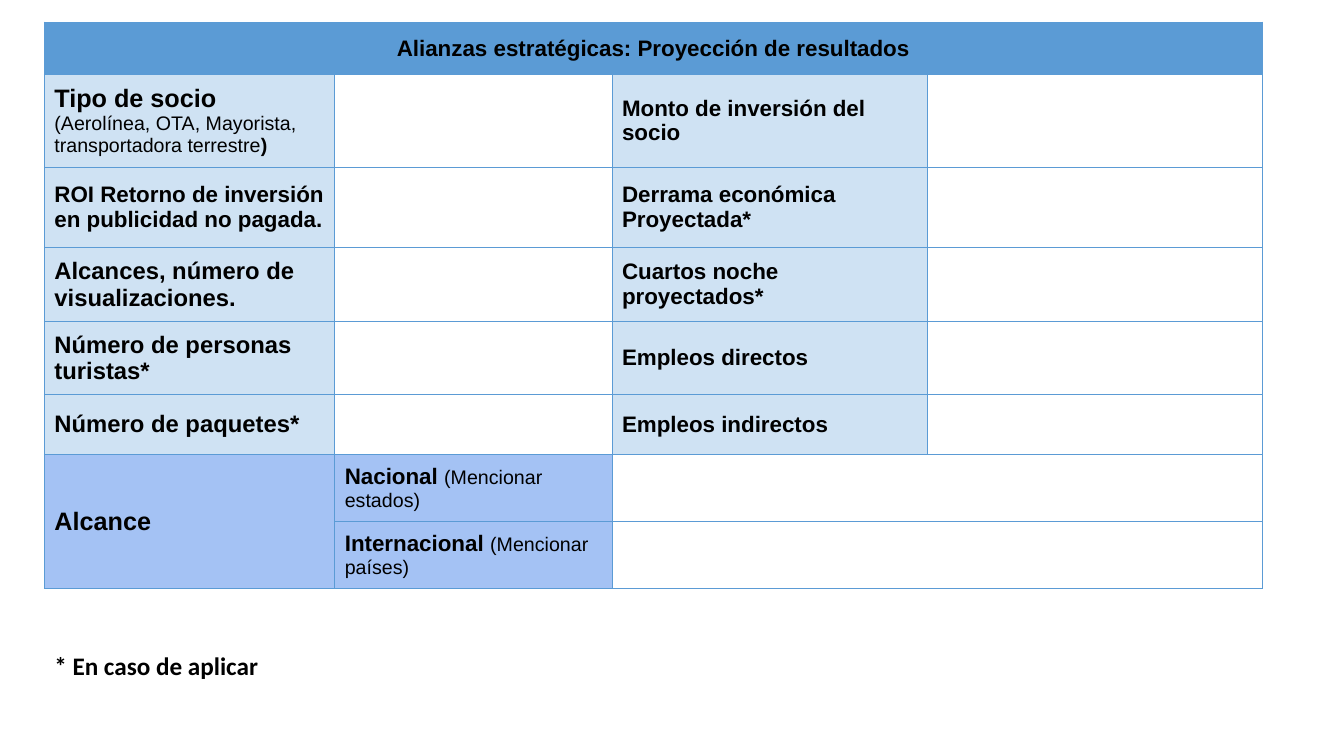
from dataclasses import dataclass

from lxml import etree
from pptx import Presentation
from pptx.dml.color import RGBColor
from pptx.enum.text import MSO_ANCHOR, PP_ALIGN
from pptx.oxml.ns import qn
from pptx.util import Inches, Pt

MIDDLE = MSO_ANCHOR.MIDDLE
CENTER, LEFT = PP_ALIGN.CENTER, PP_ALIGN.LEFT
HEADER, LABEL, SCOPE, BLACK = "5B9BD5", "CFE2F3", "A4C2F4", "000000"
WIDTH, HEIGHT = Inches(13.33), Inches(7.5)
COLUMNS = [21.61, 20.63, 23.48, 24.91]
ROWS = [6.93, 11.6, 10.67, 8.27, 8.53, 7.87, 8.53, 8]


@dataclass
class Part:
    """A stretch of text in one size and weight."""
    text: str
    size: float = 16
    bold: bool = True


@dataclass
class Entry:
    """A filled table cell with its paragraphs and its span."""
    row: int
    col: int
    lines: list[list[Part]]
    fill: str = LABEL
    rows: int = 1
    cols: int = 1
    align: PP_ALIGN = LEFT


ENTRIES = [
    Entry(0, 0, [[Part("Alianzas estratégicas: Proyección de resultados")]],
          HEADER, cols=4, align=CENTER),
    Entry(1, 0, [[Part("Tipo de socio", 18)],
                 [Part("(Aerolínea, OTA, Mayorista, transportadora terrestre", 14, False),
                  Part(")", 14)]]),
    Entry(1, 2, [[Part("Monto de inversión del socio")]]),
    Entry(2, 0, [[Part("ROI Retorno de inversión en publicidad no pagada.")]]),
    Entry(2, 2, [[Part("Derrama económica")], [Part("Proyectada*")]]),
    Entry(3, 0, [[Part("Alcances, número de visualizaciones.", 17)]]),
    Entry(3, 2, [[Part("Cuartos noche")], [Part("proyectados*")]]),
    Entry(4, 0, [[Part("Número de personas turistas*", 17)]]),
    Entry(4, 2, [[Part("Empleos directos")]]),
    Entry(5, 0, [[Part("Número de paquetes*", 17)]]),
    Entry(5, 2, [[Part("Empleos indirectos")]]),
    Entry(6, 0, [[Part("Alcance", 18)]], SCOPE, rows=2),
    Entry(6, 1, [[Part("Nacional "), Part("(Mencionar estados)", 14, False)]], SCOPE),
    Entry(7, 1, [[Part("Internacional "), Part("(Mencionar países)", 14, False)]], SCOPE),
]


def across(percent: float) -> int:
    """Turn a percentage of the slide's width into a length."""
    return round(WIDTH * percent / 100)


def down(percent: float) -> int:
    """Turn a percentage of the slide's height into a length."""
    return round(HEIGHT * percent / 100)


def colour(value: str) -> RGBColor:
    """Turn a hex string into a colour."""
    return RGBColor.from_string(value)


def write(p, parts: list[Part], font: str) -> None:
    """Add formatted runs to a paragraph."""
    for part in parts:
        r = p.add_run()
        r.text = part.text
        r.font.name = font
        r.font.size = Pt(part.size)
        r.font.bold = part.bold
        r.font.color.rgb = colour(BLACK)


def outline(cell) -> None:
    """Draw thin blue lines on the four sides of a cell."""
    tc_pr = cell._tc.get_or_add_tcPr()
    for side in ("a:lnL", "a:lnR", "a:lnT", "a:lnB"):
        ln = etree.SubElement(tc_pr, qn(side), w=str(Pt(0.75)))
        fill = etree.SubElement(ln, qn("a:solidFill"))
        etree.SubElement(fill, qn("a:srgbClr"), val=HEADER)


def fill_cell(table, entry: Entry) -> None:
    """Merge, colour and write one cell of the table."""
    cell = table.cell(entry.row, entry.col)
    if entry.rows * entry.cols > 1:
        cell.merge(table.cell(entry.row + entry.rows - 1, entry.col + entry.cols - 1))
    cell.fill.solid()
    cell.fill.fore_color.rgb = colour(entry.fill)
    cell.vertical_anchor = MIDDLE
    cell.margin_left = cell.margin_right = Inches(0.1)
    cell.margin_top = cell.margin_bottom = Inches(0.1)
    tf = cell.text_frame
    for i, parts in enumerate(entry.lines):
        p = tf.add_paragraph() if i else tf.paragraphs[0]
        p.alignment = entry.align
        write(p, parts, "Arial")


def add_results(s) -> None:
    """Add the table of projected results."""
    table = s.shapes.add_table(len(ROWS), len(COLUMNS), across(3.3), down(2.93),
                               across(sum(COLUMNS)), down(sum(ROWS))).table
    table.first_row = table.horz_banding = False
    for column, share in zip(table.columns, COLUMNS):
        column.width = across(share)
    for row, share in zip(table.rows, ROWS):
        row.height = down(share)
    for cell in table.iter_cells():
        outline(cell)
        cell.fill.background()
    for entry in ENTRIES:
        fill_cell(table, entry)
    for row in (6, 7):
        table.cell(row, 2).merge(table.cell(row, 3))


def add_footnote(s) -> None:
    """Add the note under the table."""
    sp = s.shapes.add_textbox(across(2.03), down(85.87), across(52.89), down(7.2))
    tf = sp.text_frame
    tf.word_wrap = True
    p = tf.paragraphs[0]
    p.line_spacing = 0.9
    p.space_before = Pt(10)
    p_pr = p._p.get_or_add_pPr()
    p_pr.set("marL", str(Inches(0.25)))
    p_pr.set("indent", str(Inches(-0.08)))
    write(p, [Part("* En caso de aplicar", 18)], "Calibri")


def main() -> None:
    """Build and save the slide."""
    prs = Presentation()
    prs.slide_width, prs.slide_height = WIDTH, HEIGHT
    s = prs.slides.add_slide(prs.slide_layouts[6])
    add_results(s)
    add_footnote(s)
    prs.save("out.pptx")


if __name__ == "__main__":
    main()
